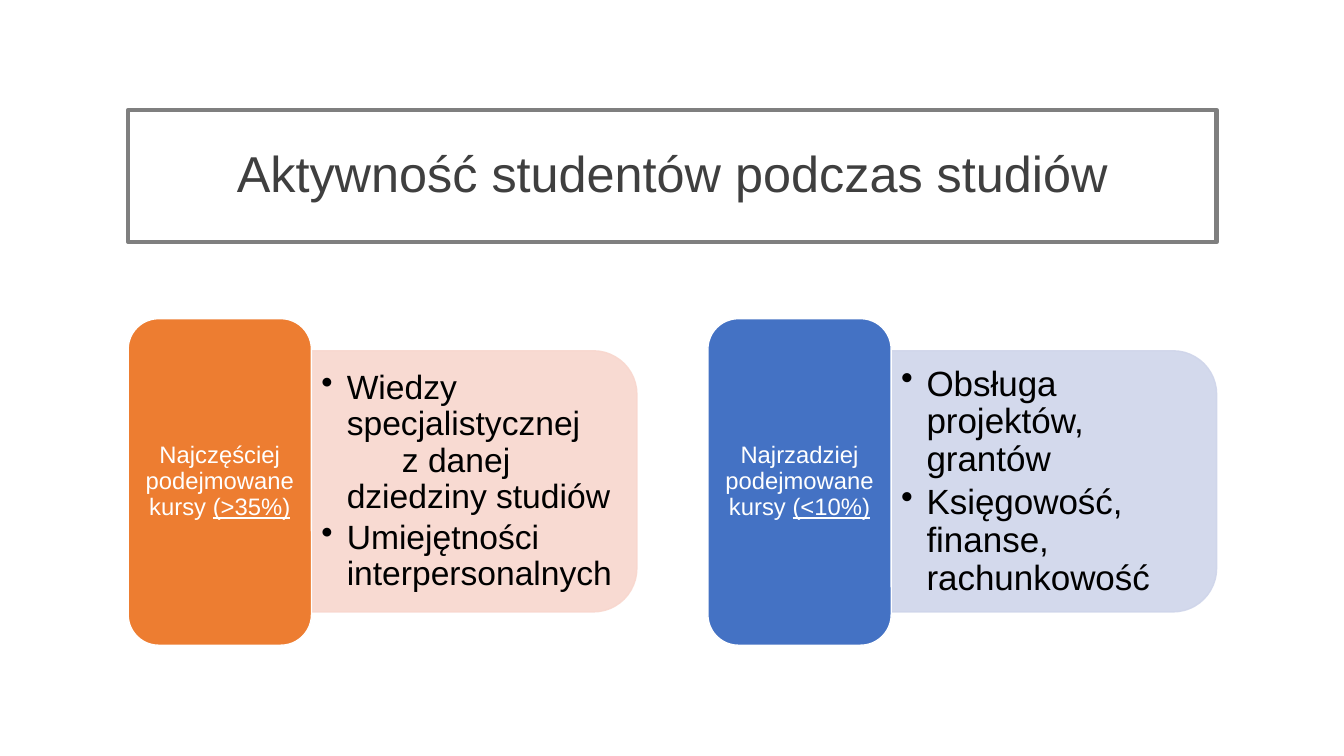
import pptx
import pptx.util
import pptx.dml.color
import pptx.enum.shapes
import pptx.enum.text
import pptx.oxml
import lxml.etree

Cm, Pt = pptx.util.Cm, pptx.util.Pt
RGB = pptx.dml.color.RGBColor.from_string
KIND = pptx.enum.shapes.MSO_SHAPE
MIDDLE = pptx.enum.text.MSO_ANCHOR.MIDDLE
CENTER = pptx.enum.text.PP_ALIGN.CENTER
COLORS = {
    "white": "FFFFFF", "black": "000000", "frame": "7F7F7F", "title": "3F3F3F",
    "orange": "ED7D31", "peach": "F8D7CE", "blue": "4472C4", "pale": "CFD5EA",
}
PANELS = [
    ("orange", "peach", "Najczęściej podejmowane kursy ", "(>35%)", 24,
     ["Wiedzy specjalistycznej\v\tz danej dziedziny studiów",
      "Umiejętności interpersonalnych"]),
    ("blue", "pale", "Najrzadziej podejmowane kursy ", "(<10%)", 25,
     ["Obsługa projektów, grantów", "Księgowość, finanse, rachunkowość"]),
]
LEFT, TOP, STEP = 3.23, 8.03, 14.61


def paint(shape, fill, line, width):
    shape.fill.solid()
    shape.fill.fore_color.rgb = RGB(COLORS[fill])
    shape.line.color.rgb = RGB(COLORS[line])
    shape.line.width = Pt(width)


def style(para, size, color):
    para.line_spacing = 0.9
    for run in para.runs:
        run.font.name = "Arial"
        run.font.size = Pt(size)
        run.font.color.rgb = RGB(COLORS[color])


deck = pptx.Presentation()
deck.slide_width, deck.slide_height = Cm(33.87), Cm(19.05)
slide = deck.slides.add_slide(deck.slide_layouts[5])

title = slide.shapes.title
title.left, title.top, title.width, title.height = Cm(LEFT), Cm(2.77), Cm(27.43), Cm(3.33)
paint(title, "white", "frame", 3)
title.text_frame.text = "Aktywność studentów podczas studiów"
title.text_frame.vertical_anchor = MIDDLE
title.text_frame.paragraphs[0].alignment = CENTER
style(title.text_frame.paragraphs[0], 36, "title")

for i, (dark, light, label, share, size, items) in enumerate(PANELS):
    x = LEFT + i * STEP
    group = slide.shapes.add_group_shape().shapes

    # Pale card, turned so that its round corners face right
    card = group.add_shape(KIND.ROUND_2_SAME_RECTANGLE,
                           Cm(x + 5.43), Cm(TOP), Cm(6.58), Cm(8.2))
    card.rotation = 90
    card.shadow.inherit = False
    paint(card, light, light, 1)
    for tone in card._element.spPr.iter(pptx.oxml.ns.qn("a:srgbClr")):
        lxml.etree.SubElement(tone, pptx.oxml.ns.qn("a:alpha"), val="90000")

    # Bulleted list on the card
    frame = group.add_textbox(Cm(x + 4.62), Cm(9.17), Cm(7.87), Cm(5.94)).text_frame
    frame.word_wrap = True
    frame.vertical_anchor = MIDDLE
    frame.text = "\n".join(items)
    for para in frame.paragraphs:
        style(para, size, "black")
        para.space_after = Pt(size * 0.15)
        props = para._p.get_or_add_pPr()
        props.set("marL", str(Cm(0.64)))
        props.set("indent", str(Cm(-0.64)))
        lxml.etree.SubElement(props, pptx.oxml.ns.qn("a:buChar"), char="•")
        if "\t" in para.text:
            tabs = lxml.etree.SubElement(props, pptx.oxml.ns.qn("a:tabLst"))
            lxml.etree.SubElement(tabs, pptx.oxml.ns.qn("a:tab"),
                                  pos=str(Cm(2.03)), algn="l")

    # Coloured label
    tab = group.add_shape(KIND.ROUNDED_RECTANGLE, Cm(x), Cm(TOP), Cm(4.62), Cm(8.23))
    tab.shadow.inherit = False
    paint(tab, dark, "white", 1)
    frame = tab.text_frame
    frame.word_wrap = True
    frame.vertical_anchor = MIDDLE
    frame.margin_left = frame.margin_right = Cm(0.18)
    frame.margin_top = frame.margin_bottom = Cm(0.1)
    para = frame.paragraphs[0]
    para.text = label
    para.alignment = CENTER
    rate = para.add_run()
    rate.text = share
    rate.font.underline = True
    style(para, 17, "white")

deck.save("out.pptx")
